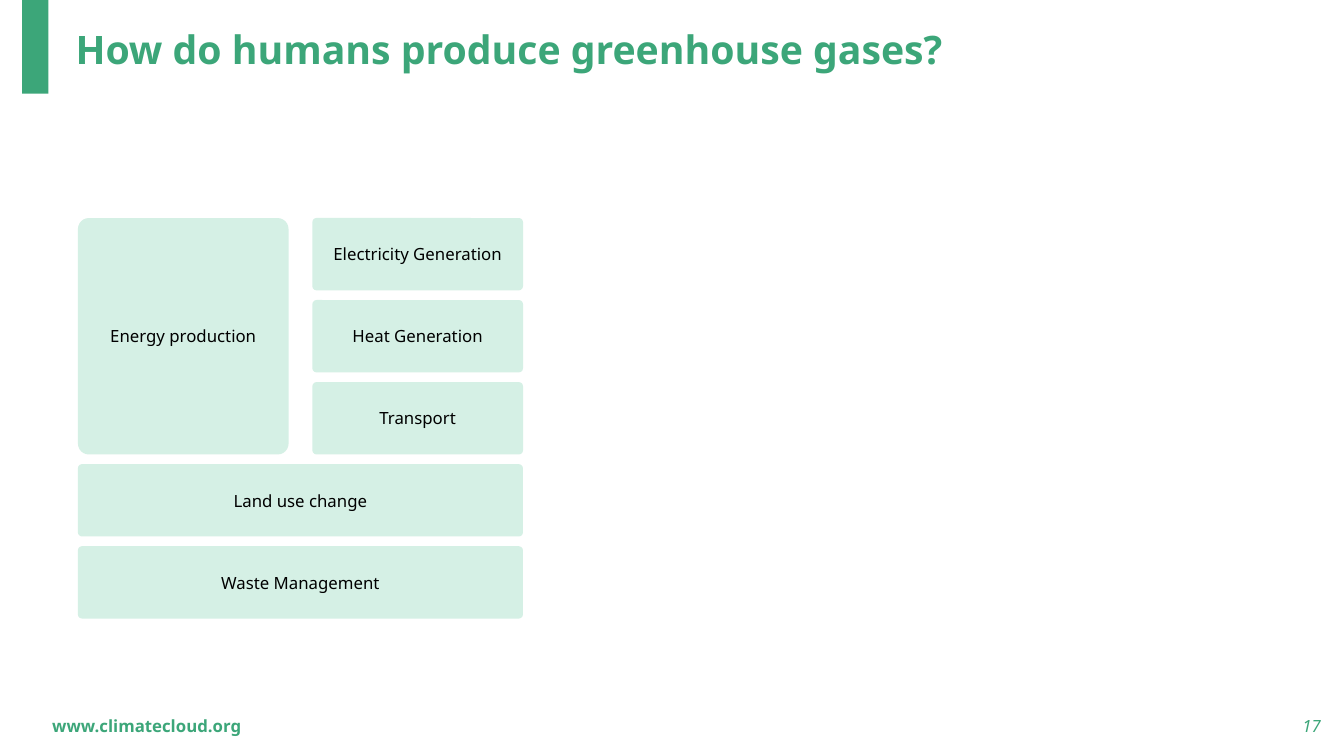
from pptx import Presentation
from pptx.dml.color import RGBColor
from pptx.enum.shapes import MSO_SHAPE
from pptx.enum.text import MSO_ANCHOR, PP_ALIGN
from pptx.util import Inches, Pt

RECT, ROUND = MSO_SHAPE.RECTANGLE, MSO_SHAPE.ROUNDED_RECTANGLE
MIDDLE = MSO_ANCHOR.MIDDLE
LEFT, CENTER, RIGHT = PP_ALIGN.LEFT, PP_ALIGN.CENTER, PP_ALIGN.RIGHT
FONT = "Noto Sans"
GREEN, PALE, BLACK = "3CA679", "D5F0E5", "000000"
WIDE, HIGH = 13.33, 7.5

# label, column, row, columns spanned, rows spanned
SOURCES = [
    ("Energy production", 0, 0, 1, 3),
    ("Electricity Generation", 1, 0, 1, 1),
    ("Heat Generation", 1, 1, 1, 1),
    ("Transport", 1, 2, 1, 1),
    ("Land use change", 0, 3, 2, 1),
    ("Waste Management", 0, 4, 2, 1),
]


def color(code):
    return RGBColor.from_string(code)


def write(shape, text, size, code, align, bold=False, italic=False):
    frame = shape.text_frame
    frame.word_wrap = True
    frame.vertical_anchor = MIDDLE
    frame.text = text
    para = frame.paragraphs[0]
    para.alignment = align
    font = para.runs[0].font
    font.name, font.size = FONT, Pt(size)
    font.bold, font.italic = bold, italic
    font.color.rgb = color(code)


def block(slide, kind, box, fill):
    shape = slide.shapes.add_shape(kind, *map(Inches, box))
    shape.shadow.inherit = False
    shape.fill.solid()
    shape.fill.fore_color.rgb = color(fill)
    shape.line.color.rgb = color(fill)
    shape.line.width = Pt(1)
    return shape


def header(slide, box, text):
    left, top, width, height = box
    bar = block(slide, RECT, (left, top, 0.26, height), GREEN)
    bar.line.fill.background()
    title = slide.shapes.title
    title.left, title.top = Inches(left + 0.43), Inches(top + 0.13)
    title.width, title.height = Inches(width - 0.43), Inches(0.76)
    write(title, text, 28, GREEN, LEFT, bold=True)
    title.text_frame.paragraphs[0].line_spacing = 0.9


def diagram(slide, box, cols=2, rows=5, xgap=0.25, ygap=0.11):
    left, top, width, height = box
    xstep = (width + xgap) / cols
    ystep = (height + ygap) / rows
    for text, col, row, across, down in SOURCES:
        cell = (left + col * xstep, top + row * ystep,
                across * xstep - xgap, down * ystep - ygap)
        shape = block(slide, ROUND, cell, PALE)
        shape.adjustments[0] = 0.049
        write(shape, text, 12, BLACK, CENTER)


def footer(slide, box, site, number):
    left, top, width, height = box
    add = slide.shapes.add_textbox
    note = add(*map(Inches, (left, top, 4.5, height)))
    write(note, site, 12, GREEN, LEFT, bold=True)
    page = add(*map(Inches, (left + width - 3, top, 3, height)))
    write(page, number, 12, GREEN, RIGHT, italic=True)


def main():
    deck = Presentation()
    deck.slide_width, deck.slide_height = Inches(WIDE), Inches(HIGH)
    slide = deck.slides.add_slide(deck.slide_layouts[5])
    header(slide, (0.22, 0, 11.16, 0.93),
           "How do humans produce greenhouse gases?")
    diagram(slide, (0.78, 2.17, 4.4, 3.96))
    footer(slide, (0.42, 7, 12.78, 0.4), "www.climatecloud.org", "17")
    deck.save("out.pptx")


if __name__ == "__main__":
    main()
